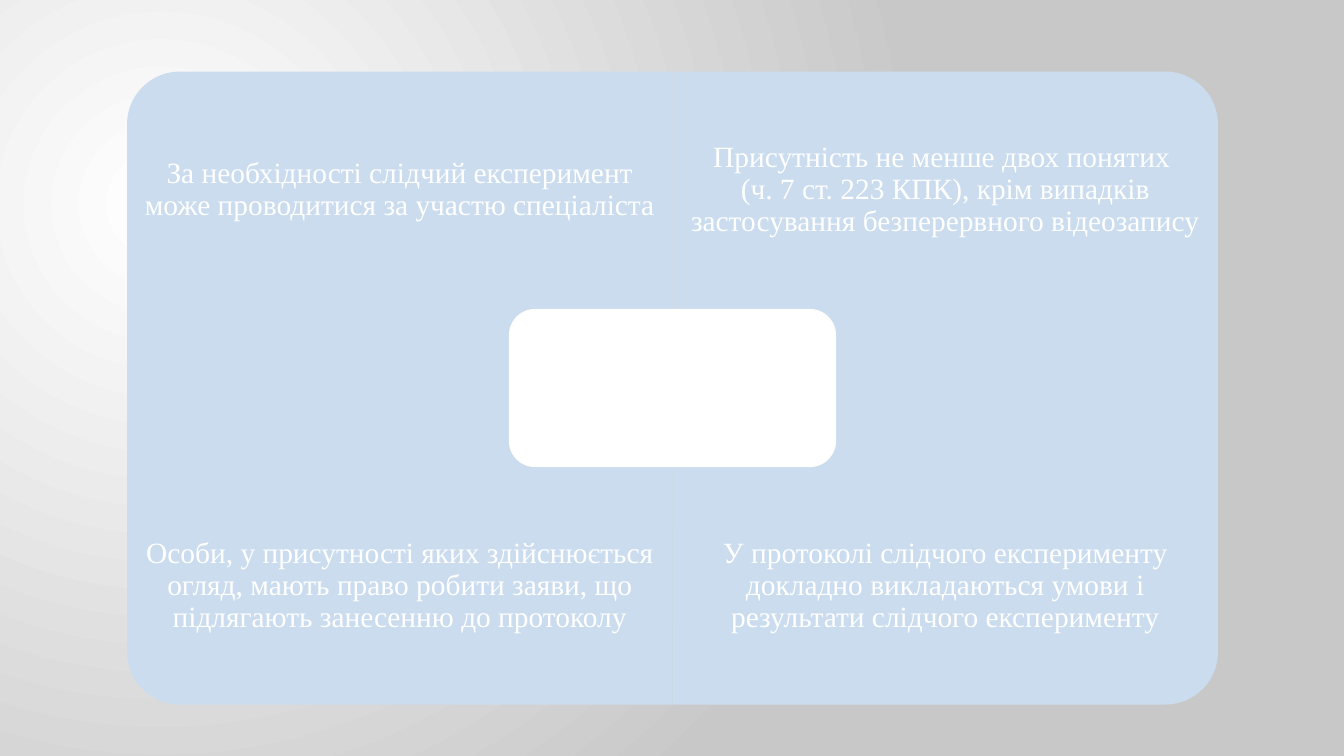
from dataclasses import dataclass

from lxml import etree
from pptx import Presentation
from pptx.dml.color import RGBColor
from pptx.enum.shapes import MSO_SHAPE
from pptx.enum.text import MSO_ANCHOR, PP_ALIGN
from pptx.oxml.ns import qn
from pptx.util import Inches, Pt

ROUND_ONE = MSO_SHAPE.ROUND_1_RECTANGLE
ROUND_ALL = MSO_SHAPE.ROUNDED_RECTANGLE
MIDDLE = MSO_ANCHOR.MIDDLE
CENTER = PP_ALIGN.CENTER


@dataclass(frozen=True)
class Theme:
    glow: str = "FFFFFF"
    edge: str = "C8C8C8"
    petal: str = "CADCEE"
    core: str = "FFFFFF"
    statement: str = "FFFFFF"
    font: str = "Times New Roman"
    statement_size: float = 21


class Matrix:
    LEFT, TOP = 1.26, 0.71
    COLUMN, ROW = 5.41, 3.14
    INSET = 0.16

    def __init__(self, slide, theme):
        self.slide = slide
        self.theme = theme

    def area(self, column, row, columns, rows):
        return (self.LEFT + column * self.COLUMN, self.TOP + row * self.ROW,
                columns * self.COLUMN, rows * self.ROW)

    def backdrop(self):
        fill = self.slide.background.fill
        fill.gradient()
        for stop, color in zip(fill.gradient_stops, (self.theme.glow, self.theme.edge)):
            stop.color.rgb = RGBColor.from_string(color)
        gradient = self.slide.element.find(".//" + qn("a:gradFill"))
        gradient.remove(gradient.find(qn("a:lin")))
        circle = etree.SubElement(gradient, qn("a:path"), {"path": "circle"})
        etree.SubElement(circle, qn("a:fillToRect"),
                         {"l": "50000", "t": "55000", "r": "125000", "b": "100000"})

    def tile(self, kind, color, column, row, columns=1, rows=1, turn=0):
        left, top, width, height = self.area(column, row, columns, rows)
        if turn % 180:
            left += (width - height) / 2
            top -= (width - height) / 2
            width, height = height, width
        tile = self.slide.shapes.add_shape(
            kind, *map(Inches, (left, top, width, height)))
        tile.rotation = turn
        tile.shadow.inherit = False
        tile.fill.solid()
        tile.fill.fore_color.rgb = RGBColor.from_string(color)
        tile.line.fill.background()

    def statement(self, wording, column, row, rows):
        box = self.slide.shapes.add_textbox(
            *map(Inches, self.area(column, row, 1, rows)))
        frame = box.text_frame
        frame.word_wrap = True
        frame.vertical_anchor = MIDDLE
        frame.margin_left = frame.margin_right = Inches(self.INSET)
        frame.margin_top = frame.margin_bottom = Inches(self.INSET)
        paragraph = frame.paragraphs[0]
        paragraph.text = wording
        paragraph.alignment = CENTER
        paragraph.line_spacing = 0.9
        paragraph.font.name = self.theme.font
        paragraph.font.size = Pt(self.theme.statement_size)
        paragraph.font.color.rgb = RGBColor.from_string(self.theme.statement)

    def quadrant(self, wording, column, row, turn):
        self.tile(ROUND_ONE, self.theme.petal, column, row, turn=turn)
        self.statement(wording, column, row * 1.25, 0.75)

    def core(self):
        self.tile(ROUND_ALL, self.theme.core, 0.7, 0.75, 0.6, 0.5)


QUADRANTS = [
    ("За необхідності слідчий експеримент може проводитися за участю спеціаліста",
     0, 0, 270),
    ("Присутність не менше двох понятих \n(ч. 7 ст. 223 КПК), крім випадків "
     "застосування безперервного відеозапису", 1, 0, 0),
    ("Особи, у присутності яких здійснюється огляд, мають право робити заяви, "
     "що підлягають занесенню до протоколу", 0, 1, 180),
    ("У протоколі слідчого експерименту докладно викладаються умови і "
     "результати слідчого експерименту", 1, 1, 90),
]


def main():
    presentation = Presentation()
    presentation.slide_width = Inches(13.33)
    presentation.slide_height = Inches(7.5)
    slide = presentation.slides.add_slide(presentation.slide_layouts[6])
    matrix = Matrix(slide, Theme())
    matrix.backdrop()
    for wording, column, row, turn in QUADRANTS:
        matrix.quadrant(wording, column, row, turn)
    matrix.core()
    presentation.save("out.pptx")


if __name__ == "__main__":
    main()
